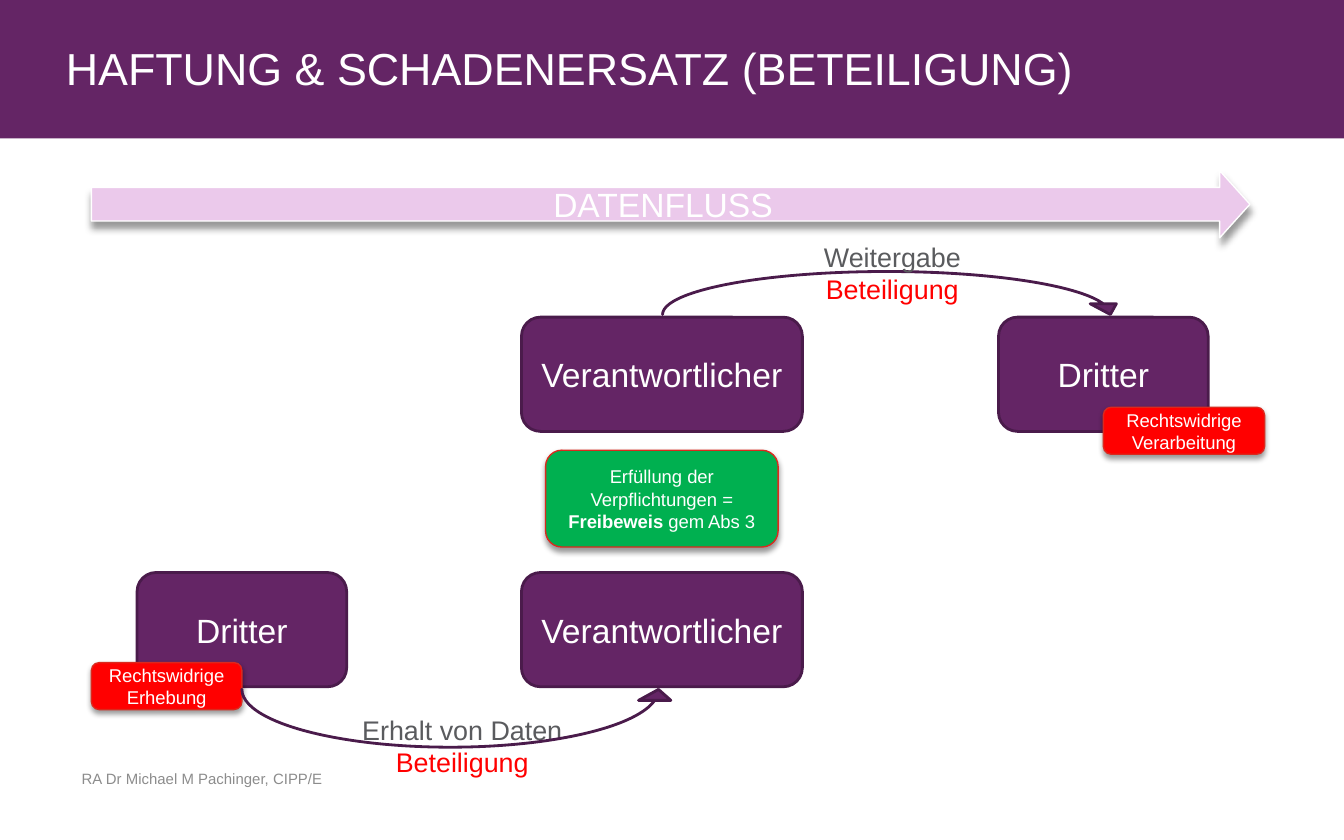
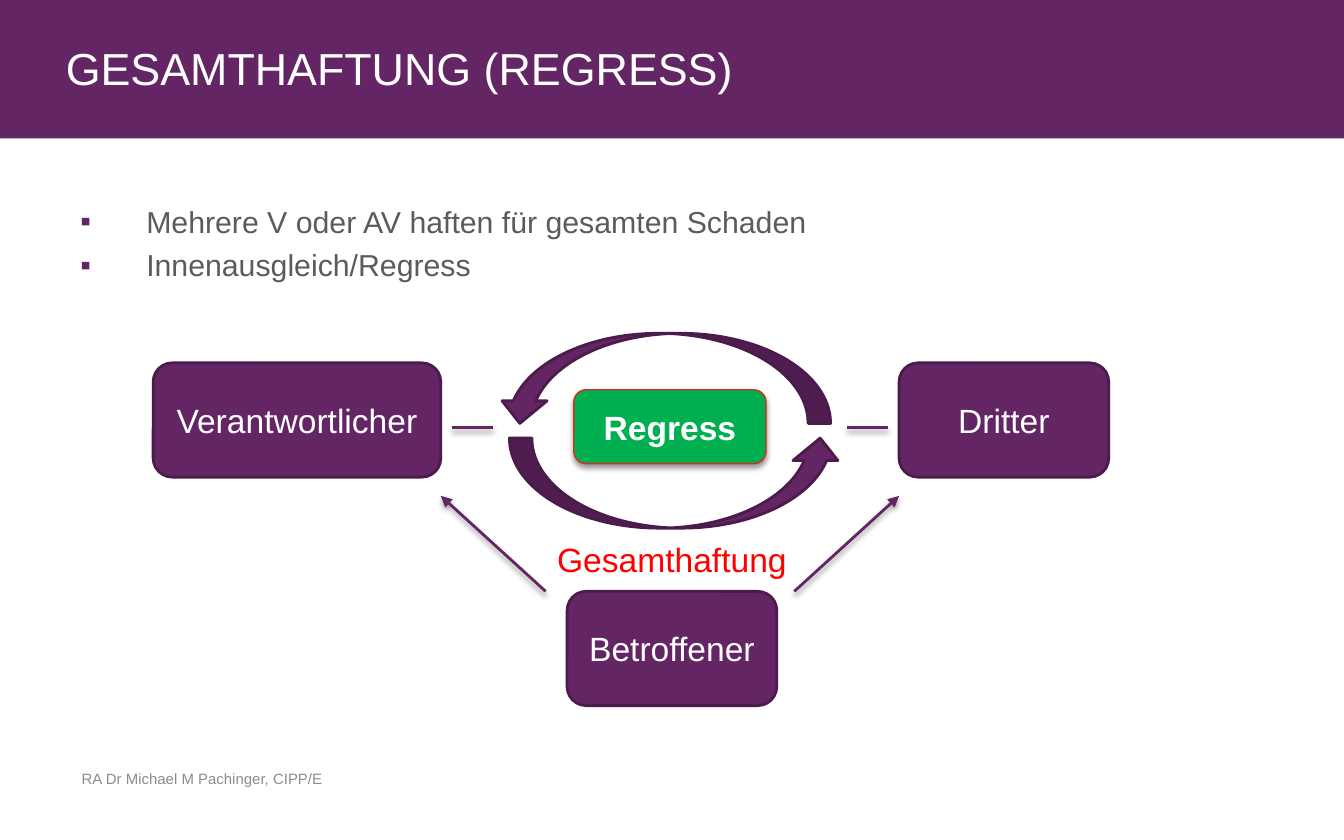
from dataclasses import dataclass

from lxml.etree import SubElement as Sub
from pptx import Presentation
from pptx.dml.color import RGBColor as Rgb
from pptx.enum.shapes import MSO_CONNECTOR as Conn, MSO_SHAPE as Kind
from pptx.enum.text import MSO_ANCHOR as Anchor, MSO_AUTO_SIZE as Auto, PP_ALIGN as Align
from pptx.oxml.ns import qn
from pptx.util import Inches, Pt

FONT = "Arial"
HUE = {
    "plum": "642565",
    "edge": "4A1B4B",
    "pink": "EBC9EB",
    "red": "FF0000",
    "rust": "DB291E",
    "green": "00B050",
    "white": "FFFFFF",
    "text": "5A5B5E",
    "foot": "8C8C8C",
    "black": "000000",
}


@dataclass(frozen=True)
class Run:
    text: str
    hue: str = ""
    bold: bool = False


@dataclass(frozen=True)
class Look:
    kind: Kind
    fill: str
    line: str
    width: float = 0.75
    size: float = 18
    shade: tuple = ()


@dataclass(frozen=True)
class Box:
    look: Look
    at: tuple
    lines: tuple = ()
    turn: float = 0
    bend: tuple = ()


@dataclass(frozen=True)
class Note:
    at: tuple
    lines: tuple
    size: float


@dataclass(frozen=True)
class Link:
    start: tuple
    end: tuple
    head: bool = False


SOFT = (3, 2)
DEEP = (4, 3.4)
ROLE = Look(Kind.ROUNDED_RECTANGLE, "plum", "edge", 1.5)
FAULT = Look(Kind.ROUNDED_RECTANGLE, "red", "rust", size=9.9, shade=SOFT)
PROOF = Look(Kind.ROUNDED_RECTANGLE, "green", "rust", size=9.9, shade=SOFT)
CLAIM = Look(Kind.ROUNDED_RECTANGLE, "green", "rust", shade=SOFT)
FLOW = Look(Kind.RIGHT_ARROW, "pink", "white", shade=DEEP)
OVER = Look(Kind.CURVED_DOWN_ARROW, "plum", "edge", 1.5)
UNDER = Look(Kind.CURVED_UP_ARROW, "plum", "edge", 1.5)


def tint(name: str) -> Rgb:
    return Rgb.from_string(HUE[name])


def place(at: tuple) -> list:
    return [Inches(n) for n in at]


def cast(props, shade: tuple) -> None:
    fx = props.find(qn("a:effectLst"))
    if fx is None:
        fx = Sub(props, qn("a:effectLst"))
    if shade:
        blur, gap = shade
        drop = Sub(fx, qn("a:outerShdw"), blurRad=str(Pt(blur)), dist=str(Pt(gap)),
                   dir="5400000", rotWithShape="0")
        tone = Sub(drop, qn("a:srgbClr"), val=HUE["black"])
        Sub(tone, qn("a:alpha"), val="40000")


def mark(para) -> None:
    props = para._p.get_or_add_pPr()
    dent = Inches(0.49)
    props.set("marL", str(dent))
    props.set("indent", str(-dent))
    Sub(Sub(props, qn("a:buClr")), qn("a:srgbClr"), val=HUE["plum"])
    Sub(props, qn("a:buFont"), typeface=FONT)
    Sub(props, qn("a:buChar"), char="▪")


def write(shape, lines: tuple, *, size: float, hue: str = "white", align=Align.CENTER,
          anchor=Anchor.TOP, list_gap: float = 0, inset: tuple = (), grow: bool = False) -> None:
    frame = shape.text_frame
    frame.word_wrap = True
    frame.vertical_anchor = anchor
    if grow:
        frame.auto_size = Auto.SHAPE_TO_FIT_TEXT
    if inset:
        (frame.margin_left, frame.margin_top,
         frame.margin_right, frame.margin_bottom) = place(inset)
    for i, line in enumerate(lines):
        para = frame.add_paragraph() if i else frame.paragraphs[0]
        para.alignment = align
        if list_gap:
            if i:
                para.space_before = Pt(list_gap)
            mark(para)
        for part in (Run(line),) if isinstance(line, str) else line:
            run = para.add_run()
            run.text = part.text
            font = run.font
            font.name, font.size, font.bold = FONT, Pt(size), part.bold
            font.color.rgb = tint(part.hue or hue)


def draw_box(slide, box: Box):
    look = box.look
    shape = slide.shapes.add_shape(look.kind, *place(box.at))
    shape.rotation = box.turn
    for i, value in enumerate(box.bend):
        shape.adjustments[i] = value
    shape.fill.solid()
    shape.fill.fore_color.rgb = tint(look.fill)
    shape.line.color.rgb = tint(look.line)
    shape.line.width = Pt(look.width)
    shape.shadow.inherit = False
    cast(shape.element.spPr, look.shade)
    if box.lines:
        write(shape, box.lines, size=look.size, anchor=Anchor.MIDDLE)


def draw_note(slide, note: Note) -> None:
    area = slide.shapes.add_textbox(*place(note.at))
    write(area, note.lines, size=note.size, hue="text", grow=True)


def draw_link(slide, link: Link) -> None:
    wire = slide.shapes.add_connector(Conn.STRAIGHT, *place(link.start + link.end))
    wire.line.color.rgb = tint("plum")
    wire.line.width = Pt(1.5)
    props = wire.element.spPr
    if link.head:
        Sub(props.find(qn("a:ln")), qn("a:tailEnd"), type="triangle")
    cast(props, SOFT)


DRAW = {Box: draw_box, Note: draw_note, Link: draw_link}


def role(name: str, x: float, y: float, wide: float = 1.56) -> Box:
    return Box(ROLE, (x, y, wide, 0.85), (name,))


def share(name: str, x: float, y: float) -> Note:
    return Note((x, y, 2.2, 0.59), (name, (Run("Beteiligung", "red"),)), 14.4)


def add_page(deck, title: str, items: list, points: tuple = ()) -> None:
    slide = deck.slides.add_slide(deck.slide_layouts[6])
    band = slide.shapes.add_shape(Kind.RECTANGLE, *place((0, -0.02, 10, 1.05)))
    band.fill.solid()
    band.fill.fore_color.rgb = tint("plum")
    band.line.fill.background()
    band.shadow.inherit = False
    write(band, (title,), size=24, align=Align.LEFT, anchor=Anchor.MIDDLE,
          inset=(0.49, 0.05, 0.1, 0.05))
    if points:
        body = slide.shapes.add_textbox(*place((0.5, 1.46, 9, 4.12)))
        write(body, points, size=16.2, hue="text", align=Align.LEFT, list_gap=4)
    for item in items:
        DRAW[type(item)](slide, item)
    foot = slide.shapes.add_textbox(*place((0.51, 5.68, 3.17, 0.33)))
    write(foot, ("RA Dr Michael M Pachinger, CIPP/E",), size=8, hue="foot", align=Align.LEFT)


SHARES = [
    role("Verantwortlicher", 3.88, 2.36, 2.09),
    role("Dritter", 7.43, 2.36),
    Box(OVER, (4.93, 2.02, 3.43, 0.32), bend=(0, 0.61, 0.25)),
    share("Weitergabe", 5.54, 1.74),
    Box(FAULT, (8.21, 3.03, 1.2, 0.35), ("Rechtswidrige Verarbeitung",)),
    Box(PROOF, (4.06, 3.35, 1.73, 0.72),
        ("Erfüllung der Verpflichtungen =",
         (Run("Freibeweis ", bold=True), Run("gem Abs 3")))),
    role("Verantwortlicher", 3.88, 4.26, 2.09),
    role("Dritter", 1.02, 4.26),
    Box(FAULT, (0.68, 4.93, 1.12, 0.35), ("Rechtswidrige Erhebung",)),
    share("Erhalt von Daten", 2.34, 5.26),
    Box(UNDER, (1.8, 5.13, 3.22, 0.43), bend=(0, 0.56, 0.19)),
    Box(FLOW, (0.68, 1.27, 8.62, 0.5), ("DATENFLUSS",), bend=(0.5, 0.45)),
]

CLAIMS = [
    role("Verantwortlicher", 1.14, 2.7, 2.14),
    Note((3.9, 3.96, 2.2, 0.4), ((Run("Gesamthaftung", "red"),),), 18),
    Box(CLAIM, (4.27, 2.9, 1.43, 0.55), ((Run("Regress", bold=True),),)),
    role("Dritter", 6.69, 2.7),
    Link((5.91, 4.4), (6.69, 3.69), head=True),
    Link((4.06, 4.4), (3.28, 3.69), head=True),
    Box(UNDER, (3.79, 3.26, 2.48, 0.67)),
    Box(UNDER, (3.7, 2.48, 2.48, 0.67), turn=180),
    Link((3.36, 3.18), (3.67, 3.18)),
    Link((6.3, 3.18), (6.61, 3.18)),
    role("Betroffener", 4.22, 4.4),
]


def main() -> None:
    deck = Presentation()
    deck.slide_width, deck.slide_height = Inches(10), Inches(6.25)
    add_page(deck, "HAFTUNG & SCHADENERSATZ (BETEILIGUNG)", SHARES)
    add_page(deck, "GESAMTHAFTUNG (REGRESS)", CLAIMS,
             ("Mehrere V oder AV haften für gesamten Schaden", "Innenausgleich/Regress"))
    deck.save("out.pptx")


if __name__ == "__main__":
    main()
